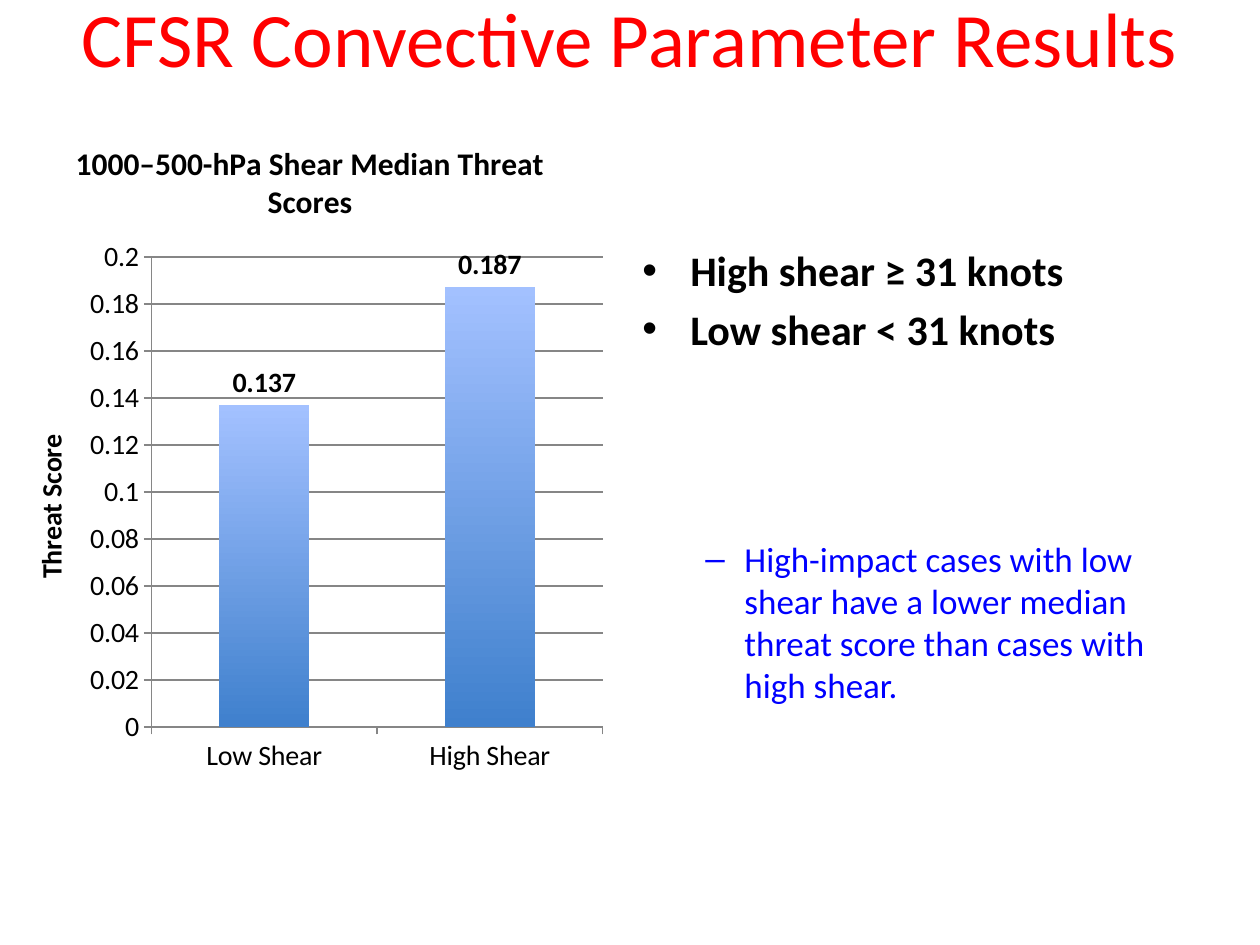
from dataclasses import dataclass

from lxml import etree
from pptx import Presentation
from pptx import util as u
from pptx.chart.data import CategoryChartData
from pptx.dml.color import RGBColor
from pptx.enum import chart as ch
from pptx.enum import text as tx
from pptx.oxml import parse_xml
from pptx.oxml.ns import nsdecls, qn


@dataclass(frozen=True)
class Theme:
    font: str = "Calibri"
    ink: str = "000000"
    heading: str = "FF0000"
    finding: str = "0000FF"
    grid: str = "868686"
    bar_bottom: str = "3F80CD"
    bar_top: str = "A3C1FF"
    title_size: int = 44
    point_size: int = 24
    finding_size: int = 20
    chart_title_size: int = 18
    label_size: int = 16


THEME = Theme()


def apply(target, **values):
    for name, value in values.items():
        setattr(target, name, value)


def format_font(font, size, color=THEME.ink, bold=False):
    apply(font, name=THEME.font, size=u.Pt(size), bold=bold)
    font.color.rgb = RGBColor.from_string(color)


def place(shape, left, top, width, height):
    apply(shape, left=u.Inches(left), top=u.Inches(top),
          width=u.Inches(width), height=u.Inches(height))


def add_title(page, words):
    title = page.shapes.title
    place(title, 0.46, -0.33, 9.08, 1.25)
    frame = title.text_frame
    apply(frame, text=words, vertical_anchor=tx.MSO_ANCHOR.MIDDLE)
    para = frame.paragraphs[0]
    para.alignment = tx.PP_ALIGN.CENTER
    format_font(para.font, THEME.title_size, THEME.heading)


def format_line(line):
    line.width = u.Pt(0.75)
    line.color.rgb = RGBColor.from_string(THEME.grid)


def set_caption(owner, words, size):
    """Give a chart or an axis a bold title."""
    frame = (owner.chart_title if hasattr(owner, "chart_title")
             else owner.axis_title).text_frame
    frame.text = words
    format_font(frame.paragraphs[0].font, size, bold=True)


def set_plot_area(chart, **shares):
    """Fix the inner plot area as shares of the chart's size."""
    area = chart.plots[0]._element.getparent()
    for old in area.findall(qn("c:layout")):
        area.remove(old)
    values = "".join(f'<c:{k} val="{v}"/>' for k, v in shares.items())
    area.insert(0, parse_xml(
        f'<c:layout {nsdecls("c")}><c:manualLayout>'
        '<c:layoutTarget val="inner"/><c:xMode val="edge"/>'
        f'<c:yMode val="edge"/>{values}</c:manualLayout></c:layout>'))


def add_score_chart(page, scores):
    data = CategoryChartData()
    data.categories = list(scores)
    data.add_series("Series 1", list(scores.values()))
    box = [u.Inches(n) for n in (0.04, 0.92, 4.84, 5.33)]
    chart = page.shapes.add_chart(
        ch.XL_CHART_TYPE.COLUMN_CLUSTERED, *box, data).chart
    chart.has_legend = False
    format_font(chart.font, THEME.label_size)
    set_caption(chart, "1000–500-hPa Shear Median Threat Scores",
                THEME.chart_title_size)
    set_plot_area(chart, x=0.24, y=0.21, w=0.74, h=0.7)

    for axis in (chart.category_axis, chart.value_axis):
        axis.major_tick_mark = ch.XL_TICK_MARK.OUTSIDE
        format_font(axis.tick_labels.font, THEME.label_size)
        format_line(axis.format.line)
    axis = chart.value_axis
    apply(axis, minimum_scale=0, maximum_scale=0.2, major_unit=0.02,
          has_major_gridlines=True)
    format_line(axis.major_gridlines.format.line)
    set_caption(axis, "Threat Score", THEME.label_size)

    plot = chart.plots[0]
    apply(plot, gap_width=150, vary_by_categories=False, has_data_labels=True)
    labels = plot.data_labels
    apply(labels, show_value=True, number_format="0.000",
          number_format_is_linked=False,
          position=ch.XL_LABEL_POSITION.OUTSIDE_END)
    format_font(labels.font, THEME.label_size, bold=True)
    fill = plot.series[0].format.fill
    fill.gradient()
    fill.gradient_angle = 90
    for stop, color in zip(fill.gradient_stops,
                           (THEME.bar_bottom, THEME.bar_top)):
        stop.color.rgb = RGBColor.from_string(color)


def add_bullet(para, mark, indent, hanging):
    props = para._p.get_or_add_pPr()
    props.set("marL", str(u.Inches(indent)))
    props.set("indent", str(-u.Inches(hanging)))
    etree.SubElement(props, qn("a:buFont"), typeface="Arial")
    etree.SubElement(props, qn("a:buChar"), char=mark)


def add_points(page, points, finding):
    box = page.shapes.add_textbox(0, 0, 0, 0)
    place(box, 5, 1.89, 4.42, 3.85)
    frame = box.text_frame
    frame.word_wrap = True
    point = dict(mark="•", indent=0.38, hanging=0.38)
    dash = dict(mark="–", indent=0.81, hanging=0.31)
    point_font = dict(size=THEME.point_size, bold=True)
    finding_font = dict(size=THEME.finding_size, color=THEME.finding)
    rows = [(words, point, point_font, 4.8) for words in points]
    rows.append((finding, dash, finding_font, 105))
    for number, (words, bullet, font, space) in enumerate(rows):
        para = frame.add_paragraph() if number else frame.paragraphs[0]
        para.text = words
        if number:
            para.space_before = u.Pt(space)
        add_bullet(para, **bullet)
        format_font(para.font, **font)
    para.level = 1


def main():
    deck = Presentation()
    apply(deck, slide_width=u.Inches(10), slide_height=u.Inches(7.5))
    page = deck.slides.add_slide(deck.slide_layouts.get_by_name("Title Only"))
    add_score_chart(page, {"Low Shear": 0.137, "High Shear": 0.187})
    add_points(
        page,
        ["High shear ≥ 31 knots", "Low shear < 31 knots"],
        "High-impact cases with low shear have a lower median threat score "
        "than cases with high shear.")
    add_title(page, "CFSR Convective Parameter Results")
    deck.save("out.pptx")


if __name__ == "__main__":
    main()
